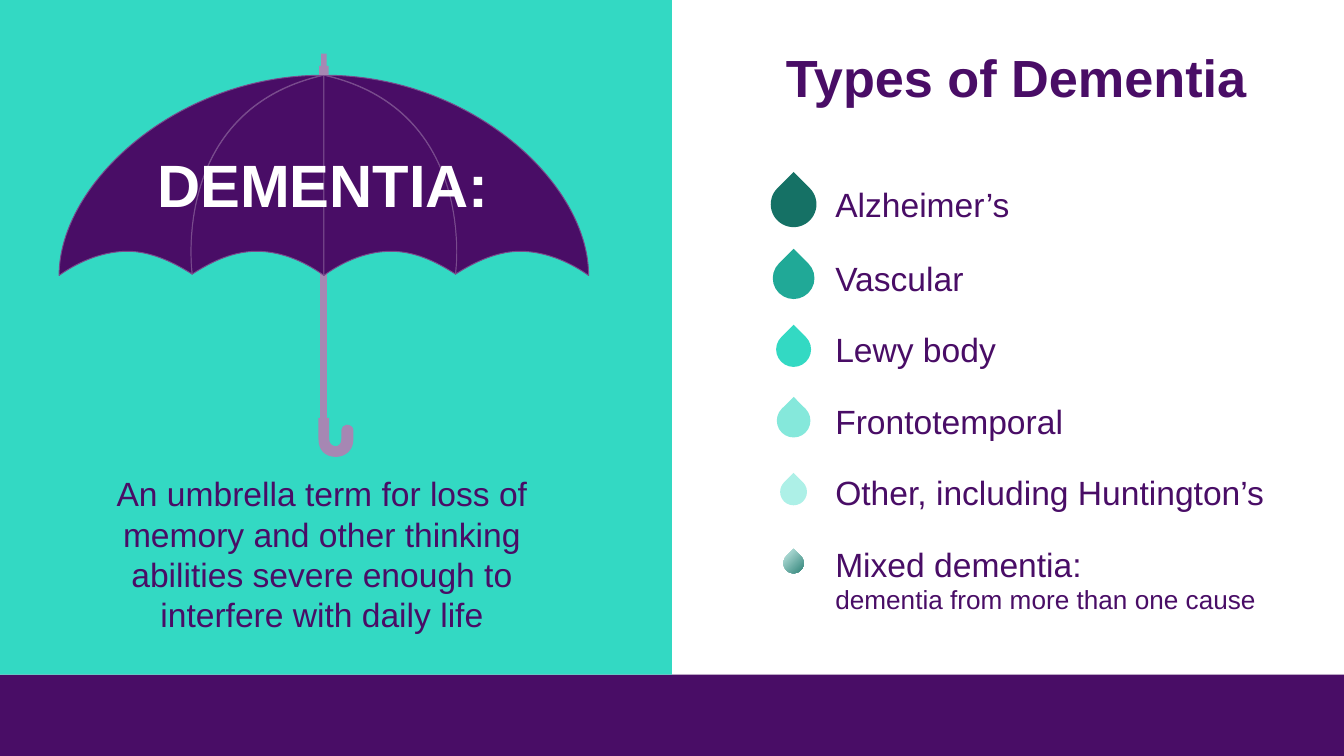
from dataclasses import dataclass

from lxml.etree import SubElement
from pptx import Presentation
from pptx.dml.color import RGBColor
from pptx.enum.shapes import MSO_CONNECTOR as Line, MSO_SHAPE as Shape
from pptx.enum.text import MSO_ANCHOR as Anchor, MSO_AUTO_SIZE as AutoSize, PP_ALIGN as Align
from pptx.oxml.ns import qn
from pptx.util import Inches, Pt

W, H = 10, 5.625
PANEL_H = 5.02
AXIS = 2.41  # centre line of the umbrella
DROP_X, LABEL_X = 5.905, 6.215
LABEL_H = 0.3

PURPLE, SEAM, MAUVE = "490D66", "794B8D", "A687B3"
TEAL, WHITE = "33D9C3", "FFFFFF"


@dataclass(frozen=True)
class DementiaType:
    label: str
    centre_y: float
    drop: float
    colours: tuple[str, ...]
    width: float = 2.09
    detail: str = ""


TYPES = [
    DementiaType("Alzheimer’s", 1.52, 0.34, ("157165",)),
    DementiaType("Vascular", 2.07, 0.31, ("20A997",)),
    DementiaType("Lewy body", 2.6, 0.26, (TEAL,)),
    DementiaType("Frontotemporal", 3.13, 0.25, ("85E8DB",)),
    DementiaType("Other, including Huntington’s", 3.66, 0.2, ("ADF0E7",), 3.28),
    DementiaType("Mixed dementia:", 4.19, 0.15, ("D6F7F3", "157165"), 3.28,
                 "dementia from more than one cause"),
]

# Outlines: a pair is a straight step, six numbers are a cubic curve.
INNER_PANEL = [
    (AXIS, 0.56), (1.26, 0.82, 1.43, 2.04, 1.43, 2.04),
    (1.54, 1.97, 1.71, 1.87, 1.91, 1.87), (2.12, 1.87, 2.3, 1.97, AXIS, 2.05),
]
OUTER_PANEL = [
    (2.4, 0.56), (1.32, 0.56, 0.44, 1.36, 0.44, 2.05),
    (0.55, 1.97, 0.74, 1.87, 0.95, 1.87), (1.14, 1.87, 1.32, 1.97, 1.43, 2.04),
    (1.43, 2.04, 1.26, 0.82, 2.4, 0.56),
]
HANDLE = [
    (2.58, 3.16), (2.56, 3.16, 2.54, 3.18, 2.54, 3.2), (2.54, 3.27),
    (2.54, 3.3, 2.52, 3.32, 2.5, 3.32), (2.47, 3.32, 2.45, 3.3, 2.45, 3.27),
    (2.45, 3.11), (2.37, 3.11), (2.37, 3.27),
    (2.37, 3.35, 2.42, 3.4, 2.5, 3.4), (2.57, 3.4, 2.63, 3.35, 2.63, 3.27),
    (2.63, 3.2), (2.63, 3.18, 2.61, 3.16, 2.58, 3.16),
]


def rgb(value: str) -> RGBColor:
    return RGBColor.from_string(value)


def paint(sp, fill: str, line: str = "") -> None:
    sp.shadow.inherit = False
    sp.fill.solid()
    sp.fill.fore_color.rgb = rgb(fill)
    if line:
        sp.line.color.rgb = rgb(line)
        sp.line.width = Pt(0.5)
    else:
        sp.line.fill.background()


def add_block(shapes, kind, x: float, y: float, w: float, h: float, fill: str):
    sp = shapes.add_shape(kind, Inches(x), Inches(y), Inches(w), Inches(h))
    paint(sp, fill)
    return sp


def write(sp, *lines: tuple[str, float], colour: str = PURPLE, bold: bool = False,
          align=None, anchor=Anchor.TOP, margins=(0, 0, 0, 0), grow: bool = True) -> None:
    """Fill a shape with one paragraph whose lines are (text, size) pairs."""
    tf = sp.text_frame
    tf.word_wrap = True
    tf.auto_size = AutoSize.SHAPE_TO_FIT_TEXT if grow else AutoSize.NONE
    tf.vertical_anchor = anchor
    tf.margin_left, tf.margin_top, tf.margin_right, tf.margin_bottom = map(Inches, margins)
    p = tf.paragraphs[0]
    p.alignment = align
    for i, (text, size) in enumerate(lines):
        if i:
            p.add_line_break()
        r = p.add_run()
        r.text = text
        r.font.name, r.font.size, r.font.bold = "Arial", Pt(size), bold
        r.font.color.rgb = rgb(colour)


def add_text(shapes, x: float, y: float, w: float, h: float, *lines, **fmt) -> None:
    sp = shapes.add_textbox(Inches(x), Inches(y), Inches(w), Inches(h))
    write(sp, *lines, **fmt)


def add_outline(shapes, outline: list[tuple], fill: str, line: str = "",
                mirrored: bool = False) -> None:
    """Build the outline from its nodes, then join each curve's three nodes."""
    unit = 10000  # drawing units per inch
    points = [(round((2 * AXIS - x if mirrored else x) * unit), round(y * unit))
              for part in outline for x, y in zip(part[::2], part[1::2])]
    builder = shapes.build_freeform(*points[0], scale=Inches(1) / unit)
    builder.add_line_segments(points[1:], close=True)
    sp = builder.convert_to_shape()
    steps = iter(list(sp._element.iter(qn("a:lnTo"))))
    for part in outline[1:]:
        step = next(steps)
        if len(part) == 6:
            step.tag = qn("a:cubicBezTo")
            for _ in range(2):
                extra = next(steps)
                step.append(extra[0])
                extra.getparent().remove(extra)
    paint(sp, fill, line)


def add_umbrella(slide) -> None:
    shapes = slide.shapes.add_group_shape().shapes
    shaft = shapes.add_connector(Line.STRAIGHT, Inches(AXIS), Inches(1.99),
                                 Inches(AXIS), Inches(3.11))
    shaft.line.color.rgb = rgb(MAUVE)
    shaft.line.width = Pt(3.75)
    SubElement(shaft._element.spPr, qn("a:effectLst"))
    add_outline(shapes, HANDLE, MAUVE)
    for mirrored in (False, True):
        for panel in (INNER_PANEL, OUTER_PANEL):
            add_outline(shapes, panel, PURPLE, SEAM, mirrored)
    for y, w, h in ((0.49, 0.07, 0.07), (0.4, 0.04, 0.1)):
        add_block(shapes, Shape.RECTANGLE, AXIS - w / 2, y, w, h, MAUVE)


def add_type(slide, kind: DementiaType) -> None:
    size = kind.drop
    drop = add_block(slide.shapes, Shape.TEAR, DROP_X - size / 2, kind.centre_y - size / 2,
                     size, size, kind.colours[0])
    drop.rotation = 315
    if len(kind.colours) > 1:
        drop.fill.gradient()
        drop.fill.gradient_angle = 270
        for stop, colour in zip(drop.fill.gradient_stops, kind.colours):
            stop.color.rgb = rgb(colour)
    lines = [(kind.label, 18)]
    if kind.detail:
        lines.append((kind.detail, 14))
    add_text(slide.shapes, LABEL_X, kind.centre_y - LABEL_H / 2, kind.width,
             0.54 if kind.detail else LABEL_H, *lines, anchor=Anchor.MIDDLE)


def add_footer(slide) -> None:
    bar = add_block(slide.shapes, Shape.RECTANGLE, 0, PANEL_H, W, H - PANEL_H, PURPLE)
    effects = bar._element.spPr.find(qn("a:effectLst"))
    shadow = SubElement(effects, qn("a:outerShdw"), blurRad=str(Pt(3.1)),
                        dist=str(Pt(1.8)), dir="5400000", rotWithShape="0")
    colour = SubElement(shadow, qn("a:srgbClr"), val="000000")
    SubElement(colour, qn("a:alpha"), val="35000")


def main() -> None:
    prs = Presentation()
    prs.slide_width, prs.slide_height = Inches(W), Inches(H)
    slide = prs.slides.add_slide(prs.slide_layouts[5])
    add_footer(slide)

    title = slide.shapes.title
    title.left, title.top, title.width, title.height = map(Inches, (5.57, 0.34, 3.98, 1.03))
    write(title, ("Types of Dementia", 28), bold=True, align=Align.CENTER, grow=False)
    for kind in TYPES:
        add_type(slide, kind)

    add_block(slide.shapes, Shape.RECTANGLE, 0, 0, W / 2, PANEL_H, TEAL)
    add_umbrella(slide)
    add_text(slide.shapes, 0.52, 3.52, 3.75, 1.21,
             ("An umbrella term for loss of memory and other thinking abilities "
              "severe enough to interfere with daily life", 18), align=Align.CENTER)
    add_text(slide.shapes, 0.44, 1.05, 3.93, 0.64, ("DEMENTIA:", 32), colour=WHITE,
             bold=True, align=Align.CENTER, margins=(0.1, 0.05, 0.1, 0.05))
    prs.save("out.pptx")


if __name__ == "__main__":
    main()
